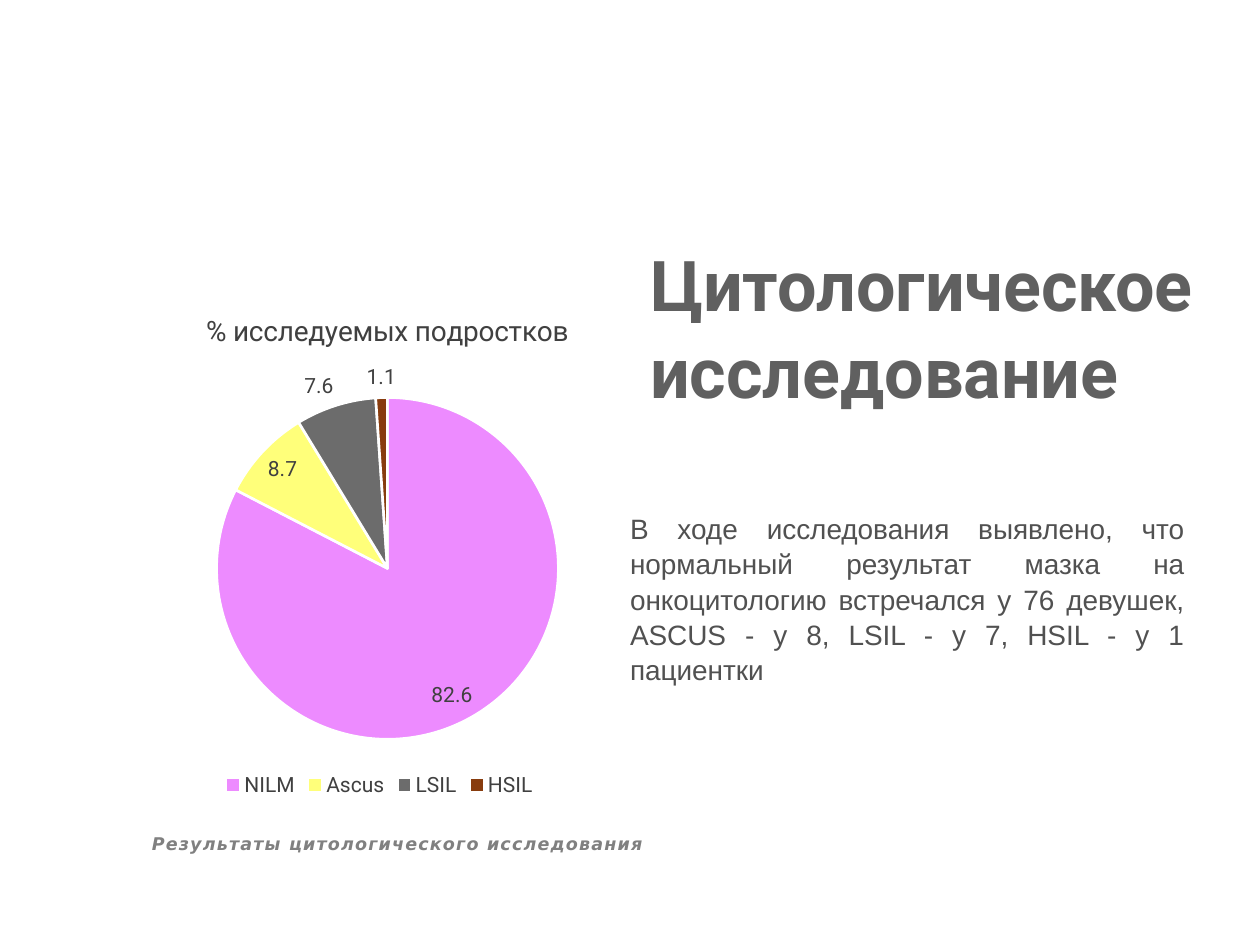
from dataclasses import dataclass

from lxml.etree import SubElement
from pptx import Presentation
from pptx.chart.data import CategoryChartData
from pptx.dml.color import RGBColor
from pptx.enum.chart import XL_CHART_TYPE, XL_LABEL_POSITION, XL_LEGEND_POSITION
from pptx.enum.text import MSO_ANCHOR, MSO_AUTO_SIZE, PP_ALIGN
from pptx.oxml import parse_xml
from pptx.oxml.ns import nsdecls, qn
from pptx.util import Pt


@dataclass(frozen=True)
class Theme:
    title: str = "606060"
    body: str = "515151"
    caption: str = "808080"
    chart_text: str = "404040"
    white: str = "FFFFFF"
    title_size: int = 40
    body_size: int = 16
    caption_size: int = 10
    chart_title_size: int = 16
    chart_size: int = 12
    heading_font: str = "Roboto"
    body_font: str = "Arial"
    caption_font: str = "DejaVu Sans"


THEME = Theme()
INSIDE, OUTSIDE = XL_LABEL_POSITION.INSIDE_END, XL_LABEL_POSITION.OUTSIDE_END

# category, percent, colour, opacity in percent, label position
SLICES = [
    ("NILM", 82.6, "E557FF", 69, INSIDE),
    ("Ascus", 8.7, "FFFF00", 52, INSIDE),
    ("LSIL", 7.6, "6C6C6C", 100, OUTSIDE),
    ("HSIL", 1.1, "883C0E", 100, OUTSIDE),
]


def style_font(font, name, size, color, bold=False, italic=False):
    font.name, font.size = name, Pt(size)
    font.bold, font.italic = bold, italic
    font.color.rgb = RGBColor.from_string(color)


def fill_text(sp, box, text, name, size, color, spacing=1.0, bold=False, italic=False):
    """Place a text shape and format its single justified paragraph."""
    sp.left, sp.top, sp.width, sp.height = (Pt(v) for v in box)
    tf = sp.text_frame
    tf.margin_left = tf.margin_right = tf.margin_top = tf.margin_bottom = 0
    tf.word_wrap, tf.auto_size = True, MSO_AUTO_SIZE.NONE
    tf.vertical_anchor = MSO_ANCHOR.TOP
    tf.text = text
    p = tf.paragraphs[0]
    p.alignment, p.line_spacing = PP_ALIGN.JUSTIFY, spacing
    r = p.runs[0]
    style_font(r.font, name, size, color, bold, italic)
    return r


def add_text(s, box, *args, **kwargs):
    sp = s.shapes.add_textbox(0, 0, 0, 0)
    return fill_text(sp, box, *args, **kwargs)


def set_layout(element, **fractions):
    """Give a chart title or plot area a manual layout."""
    inner = '<c:layoutTarget val="inner"/>' if "w" in fractions else ""
    values = "".join(f'<c:{k} val="{v}"/>' for k, v in fractions.items())
    layout = parse_xml(
        f'<c:layout {nsdecls("c")}><c:manualLayout>{inner}'
        '<c:xMode val="edge"/><c:yMode val="edge"/>'
        f"{values}</c:manualLayout></c:layout>"
    )
    for old in element.findall(qn("c:layout")):
        element.remove(old)
    tx = element.find(qn("c:tx"))
    element.insert(0 if tx is None else 1, layout)


def style_slice(point, color, opacity, position):
    fmt = point.format
    fmt.fill.solid()
    fmt.fill.fore_color.rgb = RGBColor.from_string(color)
    fmt.line.color.rgb = RGBColor.from_string(THEME.white)
    fmt.line.width = Pt(1.5)
    if opacity < 100:
        clr = point._element.find(
            f'.//{qn("c:dPt")}[last()]/{qn("c:spPr")}/{qn("a:solidFill")}/{qn("a:srgbClr")}'
        ) if hasattr(point, "_element") else fmt.fill._xPr.find(f'.//{qn("a:srgbClr")}')
        SubElement(clr, qn("a:alpha")).set("val", str(opacity * 1000))
    label = point.data_label
    style_font(label.font, THEME.heading_font, THEME.chart_size, THEME.chart_text)
    label.position = position


def add_pie(s, box, title):
    data = CategoryChartData(number_format="0.0")
    data.categories = [row[0] for row in SLICES]
    data.add_series(title, [row[1] for row in SLICES])
    chart = s.shapes.add_chart(XL_CHART_TYPE.PIE, *(Pt(v) for v in box), data).chart
    style_font(chart.font, THEME.heading_font, THEME.chart_size, THEME.chart_text)

    # Title
    chart.has_title = True
    tf = chart.chart_title.text_frame
    tf.text = title
    style_font(tf.paragraphs[0].runs[0].font, THEME.heading_font,
               THEME.chart_title_size, THEME.chart_text)
    set_layout(chart.chart_title._element, x=0.27, y=0.05)

    # Legend
    chart.has_legend = True
    chart.legend.position = XL_LEGEND_POSITION.BOTTOM
    chart.legend.include_in_layout = False
    style_font(chart.legend.font, THEME.heading_font, THEME.chart_size, THEME.chart_text)

    # Slices and their labels
    plot = chart.plots[0]
    plot.vary_by_categories = True
    for i, (_, _, color, opacity, position) in enumerate(SLICES):
        style_slice(plot.series[0].points[i], color, opacity, position)
    plot_area = chart._chartSpace.chart.plotArea
    set_layout(plot_area, x=0.29, y=0.22, w=0.44, h=0.66)


def main():
    prs = Presentation()
    prs.slide_width, prs.slide_height = Pt(720), Pt(540)
    s = prs.slides.add_slide(prs.slide_layouts[5])

    # Heading
    fill_text(s.shapes.title, (371.5, 136, 317, 98), "Цитологическое исследование",
              THEME.heading_font, THEME.title_size, THEME.title, spacing=1.04, bold=True)

    # Findings
    add_text(s, (360, 291.5, 317, 97),
             "В ходе исследования выявлено, что нормальный результат мазка на "
             "онкоцитологию встречался у 76 девушек, ASCUS - у 8, LSIL - у 7, "
             "HSIL - у 1 пациентки",
             THEME.body_font, THEME.body_size, THEME.body, spacing=1.05)

    # Chart with its caption
    add_pie(s, (-5, 161.3, 444, 297.4), "% исследуемых подростков")
    r = add_text(s, (86.8, 475.8, 296, 13), "Результаты цитологического исследования",
                 THEME.caption_font, THEME.caption_size, THEME.caption,
                 bold=True, italic=True)
    r.font._element.set("spc", "70")

    prs.save("out.pptx")


if __name__ == "__main__":
    main()
